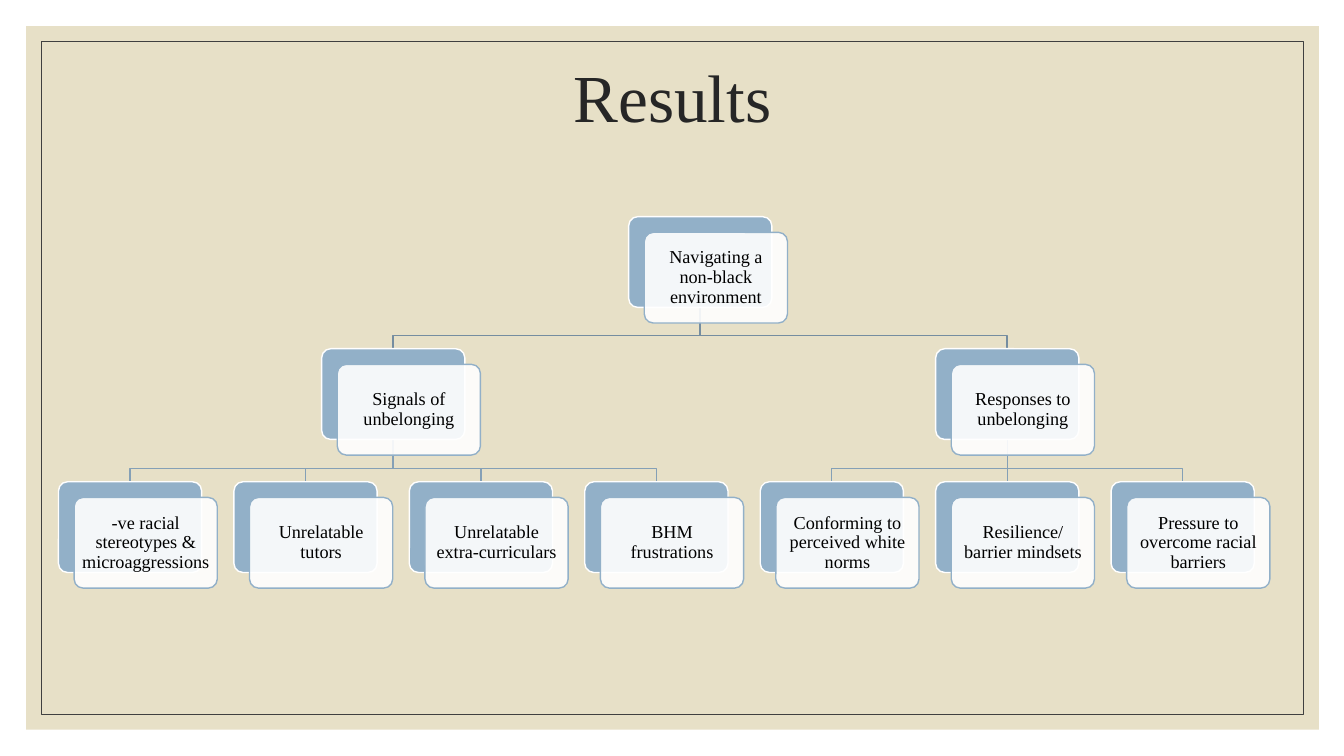
from lxml.etree import SubElement
from pptx import Presentation
from pptx.dml.color import RGBColor
from pptx.enum.shapes import MSO_CONNECTOR, MSO_SHAPE
from pptx.enum.text import MSO_ANCHOR, PP_ALIGN
from pptx.oxml.ns import qn
from pptx.util import Inches, Pt

TITLE = "Results"
ROOT = "Navigating a non-black environment"
BRANCHES = [
    ("Signals of unbelonging", [
        "-ve racial stereotypes & microaggressions",
        "Unrelatable tutors",
        "Unrelatable extra-curriculars",
        "BHM frustrations",
    ]),
    ("Responses to unbelonging", [
        "Conforming to perceived white norms",
        "Resilience/barrier mindsets",
        "Pressure to overcome racial barriers",
    ]),
]

FONT = "Times New Roman"
WHITE = RGBColor(0xFF, 0xFF, 0xFF)
BLACK = RGBColor(0, 0, 0)
SAND = RGBColor(0xE7, 0xE0, 0xC7)
FRAME = RGBColor(0x40, 0x40, 0x40)
TITLE_INK = RGBColor(0x26, 0x26, 0x26)
BLUE = RGBColor(0x92, 0xB0, 0xC8)
ROOT_LINK = RGBColor(0x75, 0x8D, 0xA0)
LEAF_LINK = RGBColor(0x85, 0xA0, 0xB6)

# Lengths in inches
CARD_W, CARD_H = 1.42, 0.9
FRONT_SHIFT = 0.155
LEFT, COLUMN_PITCH = 0.58, 1.74
ROOT_TOP, BRANCH_TOP, LEAF_TOP = 2.15, 3.46, 4.78
ELBOW_RISE = 0.13


def add_box(s, kind, x, y, w, h, fill=None, line=None, weight=1):
    sp = s.shapes.add_shape(kind, Inches(x), Inches(y), Inches(w), Inches(h))
    sp.shadow.inherit = False
    if fill is None:
        sp.fill.background()
    else:
        sp.fill.solid()
        sp.fill.fore_color.rgb = fill
    if line is None:
        sp.line.fill.background()
    else:
        sp.line.color.rgb = line
        sp.line.width = Pt(weight)
    return sp


def write(sp, text, size, color):
    tf = sp.text_frame
    tf.word_wrap = True
    tf.vertical_anchor = MSO_ANCHOR.MIDDLE
    p = tf.paragraphs[0]
    p.alignment = PP_ALIGN.CENTER
    p.line_spacing = 0.9
    r = p.add_run()
    r.text = text
    r.font.name = FONT
    r.font.size = Pt(size)
    r.font.color.rgb = color


def add_card(s, text, x, y):
    """Blue card with a translucent white text card shifted in front of it."""
    back = add_box(s, MSO_SHAPE.ROUNDED_RECTANGLE, x, y, CARD_W, CARD_H, BLUE, WHITE)
    front = add_box(s, MSO_SHAPE.ROUNDED_RECTANGLE, x + FRONT_SHIFT, y + FRONT_SHIFT,
                    CARD_W, CARD_H, WHITE, BLUE)
    for sp in (back, front):
        sp.adjustments[0] = 0.1
    color = front.fill._xPr.find(qn("a:solidFill"))[0]
    SubElement(color, qn("a:alpha"), val="90000")
    tf = front.text_frame
    tf.margin_left = tf.margin_right = tf.margin_top = tf.margin_bottom = Inches(0.05)
    write(front, text, 13, BLACK)


def add_link(s, parent, child, color):
    """Line from the parent card's foot to the child card's top, bent if needed."""
    x1, y1 = Inches(parent[0] + CARD_W / 2), Inches(parent[1] + CARD_H)
    x2, y2 = Inches(child[0] + CARD_W / 2), Inches(child[1])
    if abs(x1 - x2) < Inches(0.01):
        sp = s.shapes.add_connector(MSO_CONNECTOR.STRAIGHT, x1, y1, x2, y2)
        SubElement(sp._element.spPr, qn("a:effectLst"))
    else:
        bend = y2 - Inches(ELBOW_RISE)
        outline = s.shapes.build_freeform(x1, y1)
        outline.add_line_segments([(x1, bend), (x2, bend), (x2, y2)], close=False)
        sp = outline.convert_to_shape()
        sp.fill.background()
        sp.shadow.inherit = False
    sp.line.color.rgb = color
    sp.line.width = Pt(1)


def place_tree():
    """Return cards as (text, position) and links as (parent, child, colour)."""
    cards, links, branch_spots = [], [], []
    column = 0
    for branch, leaves in BRANCHES:
        spots = [(LEFT + COLUMN_PITCH * (column + i), LEAF_TOP) for i in range(len(leaves))]
        column += len(leaves)
        spot = ((spots[0][0] + spots[-1][0]) / 2, BRANCH_TOP)
        branch_spots.append(spot)
        cards += [(branch, spot), *zip(leaves, spots)]
        links += [(spot, leaf, LEAF_LINK) for leaf in spots]
    root = ((branch_spots[0][0] + branch_spots[-1][0]) / 2, ROOT_TOP)
    cards.insert(0, (ROOT, root))
    links += [(root, spot, ROOT_LINK) for spot in branch_spots]
    return cards, links


def main():
    prs = Presentation()
    prs.slide_width, prs.slide_height = Inches(13.33), Inches(7.5)
    s = prs.slides.add_slide(prs.slide_layouts[6])

    add_box(s, MSO_SHAPE.RECTANGLE, 0.26, 0.26, 12.82, 6.98, fill=SAND)
    add_box(s, MSO_SHAPE.RECTANGLE, 0.41, 0.41, 12.52, 6.68, line=FRAME, weight=0.5)
    title = s.shapes.add_textbox(Inches(1.17), Inches(0.25), Inches(11), Inches(1.5))
    write(title, TITLE, 48, TITLE_INK)

    cards, links = place_tree()
    for parent, child, color in links:
        add_link(s, parent, child, color)
    for text, (x, y) in cards:
        add_card(s, text, x, y)

    prs.save("out.pptx")


if __name__ == "__main__":
    main()
